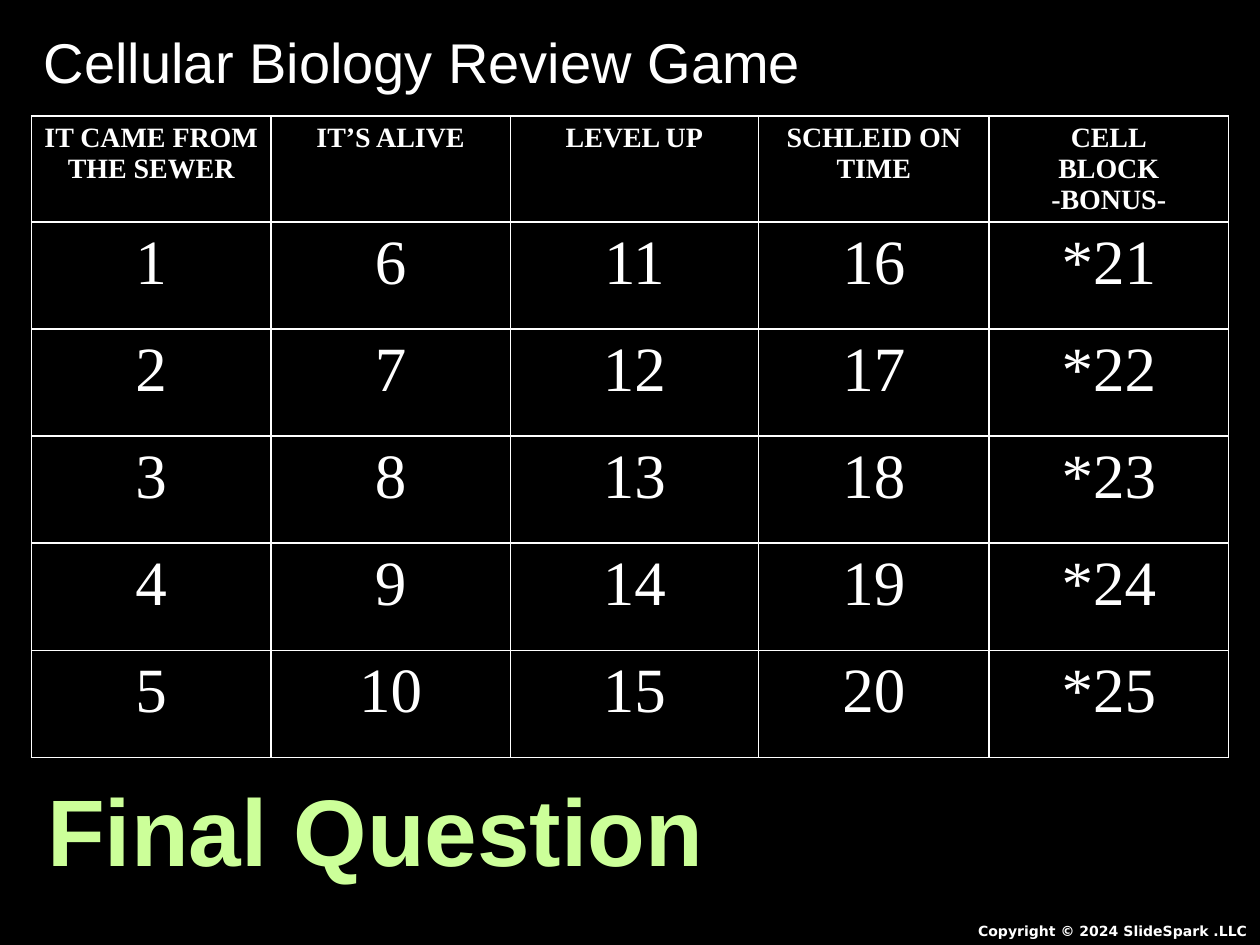
from lxml.etree import SubElement
from pptx import Presentation
from pptx.dml.color import RGBColor
from pptx.enum.text import MSO_AUTO_SIZE, PP_ALIGN
from pptx.oxml import parse_xml
from pptx.oxml.ns import nsdecls, qn
from pptx.util import Inches, Pt

BLACK = RGBColor(0x00, 0x00, 0x00)
WHITE = RGBColor(0xFF, 0xFF, 0xFF)
LIME = RGBColor(0xCC, 0xFF, 0x99)

CATEGORIES = ["IT CAME FROM THE SEWER", "IT’S ALIVE", "LEVEL UP",
              "SCHLEID ON TIME", "CELL\vBLOCK\v-BONUS-"]
QUESTIONS_PER_CATEGORY = 5
COLUMN_WIDTHS = [1.9, 1.9, 1.97, 1.83, 1.9]
HEADER_HEIGHT = 0.84
ROW_HEIGHT = 0.85


def line_xml(tag, width, color):
    return parse_xml(
        f'<a:{tag} {nsdecls("a")} w="{Pt(width)}"><a:solidFill>'
        f'<a:srgbClr val="{color}"/></a:solidFill></a:{tag}>')


class ReviewSlide:
    def __init__(self, slide):
        self.slide = slide
        slide.background.fill.solid()
        slide.background.fill.fore_color.rgb = BLACK

    def style(self, paragraph, size, font_name, color=WHITE, bold=False,
              align=PP_ALIGN.LEFT):
        paragraph.alignment = align
        font = paragraph.font
        font.size, font.name, font.bold = Pt(size), font_name, bold
        font.color.rgb = color

    def text(self, content, left, top, width, height, wrap=True, **style):
        box = self.slide.shapes.add_textbox(
            Inches(left), Inches(top), Inches(width), Inches(height))
        frame = box.text_frame
        frame.word_wrap = wrap
        frame.auto_size = MSO_AUTO_SIZE.SHAPE_TO_FIT_TEXT
        paragraph = frame.paragraphs[0]
        paragraph.text = content
        self.style(paragraph, **style)
        return paragraph

    def outline(self, paragraph, width, color):
        """Draw a line around the letters of a paragraph."""
        for run in paragraph.runs:
            properties = run._r.get_or_add_rPr()
            properties.insert(0, line_xml("ln", width, color))

    def table(self, rows, left, top, column_widths, row_heights):
        table = self.slide.shapes.add_table(
            len(rows), len(column_widths), Inches(left), Inches(top),
            Inches(sum(column_widths)), Inches(sum(row_heights))).table
        table.horz_banding = False
        for column, width in zip(table.columns, column_widths):
            column.width = Inches(width)
        for row, height in zip(table.rows, row_heights):
            row.height = Inches(height)
        for row_index, values in enumerate(rows):
            is_header = row_index == 0
            for column_index, value in enumerate(values):
                cell = table.cell(row_index, column_index)
                paragraph = cell.text_frame.paragraphs[0]
                paragraph.text = value
                self.style(paragraph, 16 if is_header else 36,
                           "Times New Roman", bold=is_header,
                           align=PP_ALIGN.CENTER)
                properties = cell._tc.get_or_add_tcPr()
                for side in ("lnL", "lnR", "lnT", "lnB"):
                    properties.append(line_xml(side, 1, WHITE))
                SubElement(properties, qn("a:noFill"))


def question_rows():
    """Number the questions down each column; the last column is the bonus."""
    last = len(CATEGORIES) - 1
    return [[("*" if column == last else "")
             + str(column * QUESTIONS_PER_CATEGORY + number)
             for column in range(len(CATEGORIES))]
            for number in range(1, QUESTIONS_PER_CATEGORY + 1)]


def main():
    presentation = Presentation()
    presentation.slide_width = Inches(10)
    presentation.slide_height = Inches(7.5)
    review = ReviewSlide(
        presentation.slides.add_slide(presentation.slide_layouts[6]))

    review.table([CATEGORIES] + question_rows(), 0.25, 0.92, COLUMN_WIDTHS,
                 [HEADER_HEIGHT] + [ROW_HEIGHT] * QUESTIONS_PER_CATEGORY)
    review.text("Copyright © 2024 SlideSpark .LLC", 7.08, 7.27, 2.92, 0.23,
                size=8, font_name="DejaVu Sans", bold=True,
                align=PP_ALIGN.RIGHT)
    review.text("Cellular Biology Review Game", 0.25, 0.17, 9.75, 0.63,
                size=32, font_name="Arial")
    final_question = review.text(
        "Final Question", 0.25, 6.08, 5.46, 1.01, wrap=False, size=54,
        font_name="Arial", color=LIME, bold=True, align=PP_ALIGN.CENTER)
    review.outline(final_question, 1.4, BLACK)

    presentation.save("out.pptx")


if __name__ == "__main__":
    main()
